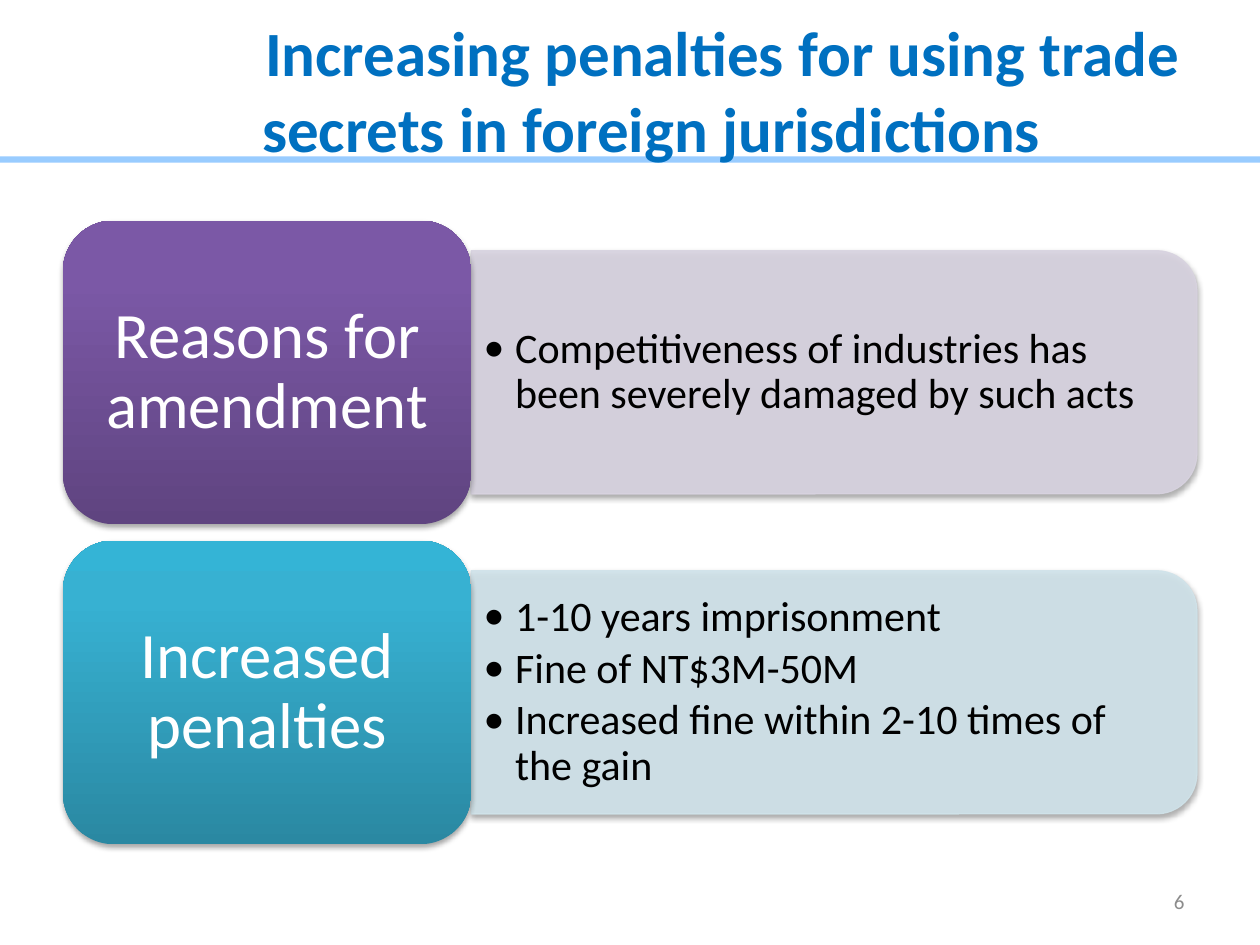
from dataclasses import dataclass

from lxml.etree import SubElement
from pptx import Presentation
from pptx.dml.color import RGBColor
from pptx.enum.shapes import MSO_SHAPE as Shape
from pptx.enum.text import MSO_ANCHOR as Anchor, PP_ALIGN as Align
from pptx.oxml.ns import qn
from pptx.util import Inches, Pt


@dataclass(frozen=True)
class Theme:
    font: str = "Calibri"
    title: str = "0070C0"
    band: str = "99CCFF"
    body: str = "000000"
    label: str = "FFFFFF"
    number: str = "8C8C8C"
    title_size: int = 36
    label_size: int = 37
    body_size: int = 24
    number_size: int = 12


THEME = Theme()

# Grid: a label column and a panel column, one row per topic (inches)
LEFT, TOP = 0.5, 1.75
LABEL_WIDTH, PANEL_WIDTH = 3.24, 5.76
ROW_HEIGHT, ROW_PITCH, PANEL_HEIGHT = 2.41, 2.54, 1.93
TEXT_WIDTH, TEXT_HEIGHT = 5.67, 1.74

TOPICS = [
    {
        "label": "Reasons for amendment",
        "gradient": [(0, "5F4480"), (80, "7B58A6"), (100, "7C57A8")],
        "panel": "D8D3E0",
        "points": ["Competitiveness of industries has been severely damaged by such acts"],
    },
    {
        "label": "Increased penalties",
        "gradient": [(0, "2A88A2"), (80, "37B1D2"), (100, "34B4D6")],
        "panel": "D0E3EA",
        "points": [
            "1-10 years imprisonment",
            "Fine of NT$3M-50M",
            "Increased fine within 2-10 times of the gain",
        ],
    },
]


def box(left, top, width, height):
    return [Inches(value) for value in (left, top, width, height)]


def add_node(parent, tag, **attributes):
    return SubElement(parent, qn(tag), {key: str(value) for key, value in attributes.items()})


def apply_format(target, values):
    for name, value in values.items():
        setattr(target, name, value)


def style_font(paragraph, size, color, bold=False):
    apply_format(paragraph.font, {"name": THEME.font, "size": Pt(size), "bold": bold})
    paragraph.font.color.rgb = RGBColor.from_string(color)


def set_frame(frame, **values):
    apply_format(frame, {"word_wrap": True, "vertical_anchor": Anchor.MIDDLE, **values})


def add_shadow(shape):
    effects = add_node(shape.element.spPr, "a:effectLst")
    shadow = add_node(effects, "a:outerShdw", blurRad=Pt(3.1), dist=Pt(1.8),
                      dir=90 * 60000, rotWithShape=0)
    add_node(add_node(shadow, "a:srgbClr", val="000000"), "a:alpha", val=35000)


def add_band(slide, width):
    """Rule that lies behind the title."""
    band = slide.shapes.add_shape(Shape.RECTANGLE, 0, Inches(1.24), width, Inches(0.05))
    band.shadow.inherit = False
    band.fill.solid()
    band.fill.fore_color.rgb = RGBColor.from_string(THEME.band)
    band.line.fill.background()
    slide.shapes.title.element.addprevious(band.element)


def set_title(slide, text):
    title = slide.shapes.title
    title.left, title.top, title.width, title.height = box(0.67, 0, 9, 1.25)
    set_frame(title.text_frame, vertical_anchor=Anchor.TOP, margin_top=Inches(0.11))
    paragraph = title.text_frame.paragraphs[0]
    paragraph.text = text
    paragraph.alignment = Align.CENTER
    # The first line is set in
    paragraph._p.get_or_add_pPr().set("indent", str(Inches(1.13)))
    style_font(paragraph, THEME.title_size, THEME.title, bold=True)


def add_panel(slide, middle, color):
    """Panel with its two right corners rounded: a top-rounded shape turned by 90 degrees."""
    center = LEFT + LABEL_WIDTH + PANEL_WIDTH / 2
    panel = slide.shapes.add_shape(
        Shape.ROUND_2_SAME_RECTANGLE,
        *box(center - PANEL_HEIGHT / 2, middle - PANEL_WIDTH / 2, PANEL_HEIGHT, PANEL_WIDTH))
    panel.rotation = 90
    panel.line.width = Pt(0.75)
    for fill in (panel.fill, panel.line.fill):
        fill.solid()
        fill.fore_color.rgb = RGBColor.from_string(color)
    for node in panel.element.spPr.iter(qn("a:srgbClr")):
        add_node(node, "a:alpha", val=90000)
    add_shadow(panel)


def add_points(slide, middle, points):
    frame = slide.shapes.add_textbox(
        *box(LEFT + LABEL_WIDTH, middle - TEXT_HEIGHT / 2, TEXT_WIDTH, TEXT_HEIGHT)).text_frame
    set_frame(frame, margin_right=Inches(0.25))
    for index, point in enumerate(points):
        paragraph = frame.add_paragraph() if index else frame.paragraphs[0]
        paragraph.text = point
        apply_format(paragraph, {"line_spacing": 0.9, "space_after": Pt(3.6)})
        properties = paragraph._p.get_or_add_pPr()
        properties.set("marL", str(Inches(0.25)))
        properties.set("indent", str(-Inches(0.25)))
        add_node(properties, "a:buFont", typeface=THEME.font)
        add_node(properties, "a:buChar", char="•")
        style_font(paragraph, THEME.body_size, THEME.body)


def add_label(slide, top, text, gradient):
    label = slide.shapes.add_shape(
        Shape.ROUNDED_RECTANGLE, *box(LEFT, top, LABEL_WIDTH, ROW_HEIGHT))
    fill = add_node(label.element.spPr, "a:gradFill", rotWithShape=1)
    stops = add_node(fill, "a:gsLst")
    for position, color in gradient:
        stop = add_node(stops, "a:gs", pos=position * 1000)
        add_node(stop, "a:srgbClr", val=color)
    add_node(fill, "a:lin", ang=270 * 60000, scaled=0)
    label.line.fill.background()
    add_shadow(label)
    set_frame(label.text_frame, margin_left=Inches(0.15), margin_right=Inches(0.15))
    paragraph = label.text_frame.paragraphs[0]
    paragraph.text = text
    apply_format(paragraph, {"alignment": Align.CENTER, "line_spacing": 0.9})
    style_font(paragraph, THEME.label_size, THEME.label)


def add_number(slide, text):
    frame = slide.shapes.add_textbox(*box(7.17, 6.95, 2.33, 0.4)).text_frame
    set_frame(frame)
    paragraph = frame.paragraphs[0]
    paragraph.text = text
    paragraph.alignment = Align.RIGHT
    style_font(paragraph, THEME.number_size, THEME.number)


def main():
    presentation = Presentation()
    presentation.slide_width, presentation.slide_height = Inches(10), Inches(7.5)
    slide = presentation.slides.add_slide(presentation.slide_layouts[5])

    # Heading
    set_title(slide, "Increasing penalties for using trade secrets in foreign jurisdictions")
    add_band(slide, presentation.slide_width)

    # One row per topic
    for row, topic in enumerate(TOPICS):
        top = TOP + row * ROW_PITCH
        middle = top + ROW_HEIGHT / 2
        add_panel(slide, middle, topic["panel"])
        add_points(slide, middle, topic["points"])
        add_label(slide, top, topic["label"], topic["gradient"])

    # Footer
    add_number(slide, "6")
    presentation.save("out.pptx")


if __name__ == "__main__":
    main()
